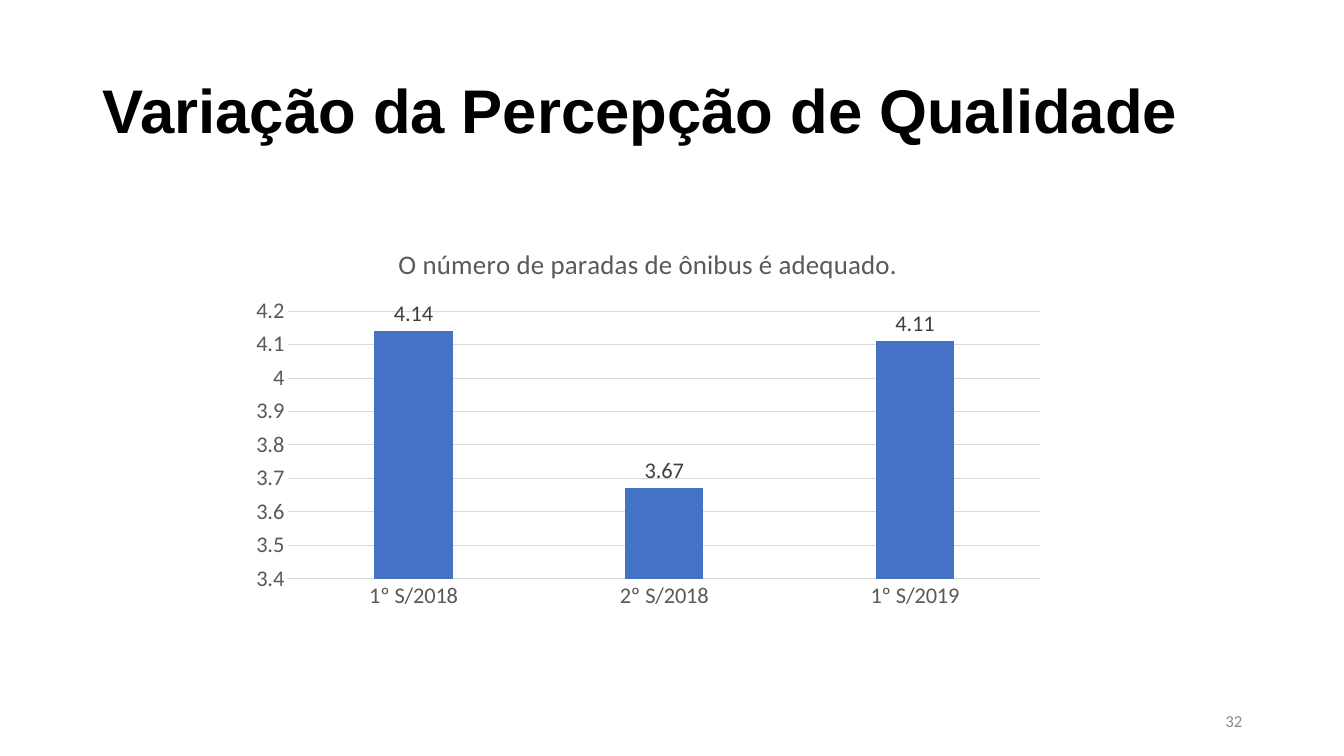
from dataclasses import dataclass

from pptx import Presentation
from pptx import util as u
from pptx.chart import data as cd
from pptx.dml.color import RGBColor
from pptx.enum import chart as ch, text as tx


@dataclass(frozen=True)
class Theme:
    head: str = "Arial"
    body: str = "Calibri"
    black: str = "000000"
    dark: str = "404040"
    gray: str = "595959"
    pale: str = "8C8C8C"
    grid: str = "D9D9D9"
    blue: str = "4472C4"
    big: float = 44
    mid: float = 19.2
    base: float = 16
    small: float = 12


T = Theme()
TITLE = "Variação da Percepção de Qualidade"
TOPIC = "O número de paradas de ônibus é adequado."
SCORES = {"1º S/2018": 4.14, "2º S/2018": 3.67, "1º S/2019": 4.11}


def style(font, size, color, face=T.body, bold=False):
    font.size = u.Pt(size)
    font.name = face
    font.bold = bold
    font.color.rgb = RGBColor.from_string(color)


def rule(line):
    line.color.rgb = RGBColor.from_string(T.grid)
    line.width = u.Pt(0.75)


def add_text(slide, box, words, align):
    frame = slide.shapes.add_textbox(*map(u.Inches, box)).text_frame
    frame.word_wrap = True
    frame.vertical_anchor = tx.MSO_ANCHOR.MIDDLE
    para = frame.paragraphs[0]
    para.text = words
    para.alignment = align
    return para


def add_title(slide, box):
    para = add_text(slide, box, TITLE, tx.PP_ALIGN.LEFT)
    para.line_spacing = 0.9
    style(para.font, T.big, T.black, T.head, True)


def add_number(slide, box):
    para = add_text(slide, box, "32", tx.PP_ALIGN.RIGHT)
    style(para.font, T.small, T.pale)


def add_scores(slide, box):
    data = cd.CategoryChartData()
    data.categories = list(SCORES)
    data.add_series(TOPIC, list(SCORES.values()))
    kind = ch.XL_CHART_TYPE.COLUMN_CLUSTERED
    chart = slide.shapes.add_chart(kind, *map(u.Inches, box), data).chart
    style(chart.font, T.base, T.black)
    chart.has_legend = False
    chart.has_title = True
    head = chart.chart_title.text_frame.paragraphs[0]
    head.text = TOPIC
    style(head.font, T.mid, T.gray)

    for axis in (chart.category_axis, chart.value_axis):
        axis.major_tick_mark = ch.XL_TICK_MARK.NONE
        axis.minor_tick_mark = ch.XL_TICK_MARK.NONE
        style(axis.tick_labels.font, T.base, T.gray)
    rule(chart.category_axis.format.line)
    scale = chart.value_axis
    scale.minimum_scale, scale.maximum_scale, scale.major_unit = 3.4, 4.2, 0.1
    scale.format.line.fill.background()
    rule(scale.major_gridlines.format.line)

    plot = chart.plots[0]
    plot.gap_width, plot.overlap = 219, -27
    plot.vary_by_categories = False
    bars = plot.series[0]
    bars.invert_if_negative = False
    bars.format.fill.solid()
    bars.format.fill.fore_color.rgb = RGBColor.from_string(T.blue)
    tags = bars.data_labels
    tags.show_value = True
    tags.position = ch.XL_LABEL_POSITION.OUTSIDE_END
    style(tags.font, T.base, T.dark)


def main():
    deck = Presentation()
    deck.slide_width, deck.slide_height = u.Inches(13.33), u.Inches(7.5)
    slide = deck.slides.add_slide(deck.slide_layouts[6])
    add_title(slide, (0.92, 0.4, 11.5, 1.45))
    add_scores(slide, (2.38, 2.25, 8.1, 3.88))
    add_number(slide, (9.42, 6.95, 3, 0.4))
    deck.save("out.pptx")


if __name__ == "__main__":
    main()
